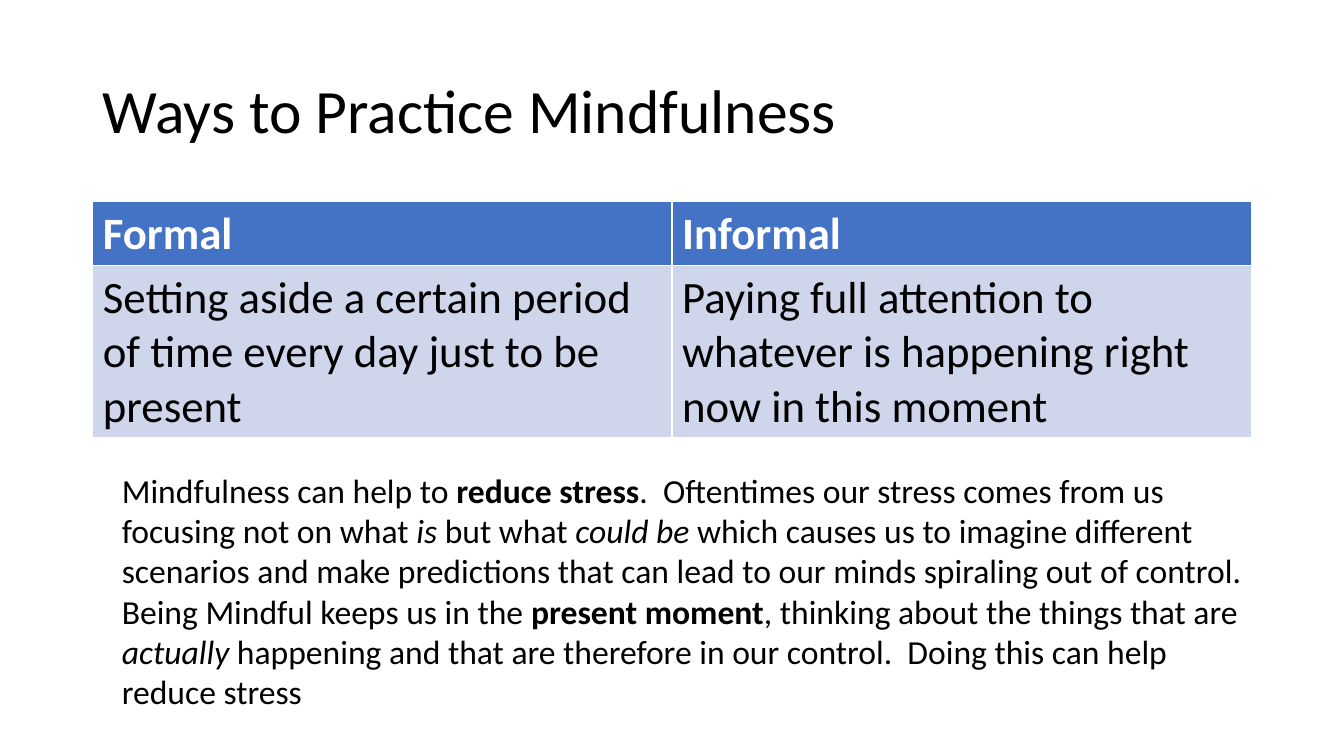
"""Builds a slide on formal and informal ways to practice mindfulness."""
from dataclasses import dataclass

from pptx import Presentation
from pptx import util as u
from pptx.dml import color
from pptx.enum import text

TITLE = "Ways to Practice Mindfulness"
WAYS = [
    ("Formal", "Informal"),
    ("Setting aside a certain period of time every day just to be present",
     "Paying full attention to whatever is happening right now in this moment"),
]
BENEFIT = [
    ("Mindfulness can help to ", ""),
    ("reduce stress", "bold"),
    (".  Oftentimes our stress comes from us focusing not on what ", ""),
    ("is", "italic"),
    (" but what ", ""),
    ("could be ", "italic"),
    ("which causes us to imagine different scenarios and make predictions that can lead "
     "to our minds spiraling out of control.  Being Mindful keeps us in the ", ""),
    ("present moment", "bold"),
    (", thinking about the things that are ", ""),
    ("actually", "italic"),
    (" happening and that are therefore in our control.  Doing this can help reduce stress", ""),
]


@dataclass(frozen=True)
class Theme:
    """Colours, font and type sizes."""
    font: str = "Calibri"
    ink: str = "000000"
    paper: str = "FFFFFF"
    header: str = "4472C4"
    band: str = "CFD5EA"
    title: int = 44
    cell: int = 32
    body: int = 24


THEME = Theme()
WIDTH, HEIGHT = 13.33, 7.5
MARGIN, TABLE_TOP = 0.92, 2
TABLE_WIDTH = WIDTH - 2 * MARGIN
ROW_HEIGHTS = (0.62, 1.71)


def write(frame, spans, size, ink=THEME.ink, bold=False, spacing=None):
    """Fill a text frame with one paragraph of styled spans."""
    frame.word_wrap = True
    para = frame.paragraphs[0]
    para.line_spacing = spacing
    for words, style in spans:
        span = para.add_run()
        span.text = words
        span.font.name = THEME.font
        span.font.size = u.Pt(size)
        span.font.bold = bold or style == "bold"
        span.font.italic = style == "italic"
        span.font.color.rgb = color.RGBColor.from_string(ink)


def add_text(page, area, spans, size, anchor=text.MSO_ANCHOR.TOP, **style):
    """Place a text box."""
    box = page.shapes.add_textbox(*map(u.Inches, area))
    box.text_frame.vertical_anchor = anchor
    write(box.text_frame, spans, size, **style)


def add_ways(page):
    """Place the table with its header row and one band."""
    area = (MARGIN, TABLE_TOP, TABLE_WIDTH, sum(ROW_HEIGHTS))
    grid = page.shapes.add_table(len(WAYS), len(WAYS[0]), *map(u.Inches, area)).table
    looks = [(THEME.header, THEME.paper, True), (THEME.band, THEME.ink, False)]
    for r, (fill, ink, bold) in enumerate(looks):
        grid.rows[r].height = u.Inches(ROW_HEIGHTS[r])
        for c, words in enumerate(WAYS[r]):
            cell = grid.cell(r, c)
            cell.fill.solid()
            cell.fill.fore_color.rgb = color.RGBColor.from_string(fill)
            write(cell.text_frame, [(words, "")], THEME.cell, ink=ink, bold=bold)


def main():
    deck = Presentation()
    deck.slide_width, deck.slide_height = u.Inches(WIDTH), u.Inches(HEIGHT)
    page = deck.slides.add_slide(deck.slide_layouts[6])
    add_text(page, (MARGIN, 0.4, TABLE_WIDTH, 1.45), [(TITLE, "")], THEME.title,
             anchor=text.MSO_ANCHOR.MIDDLE, spacing=0.9)
    add_ways(page)
    add_text(page, (1.11, 4.61, 11.41, 2.52), BENEFIT, THEME.body)
    deck.save("out.pptx")


if __name__ == "__main__":
    main()
